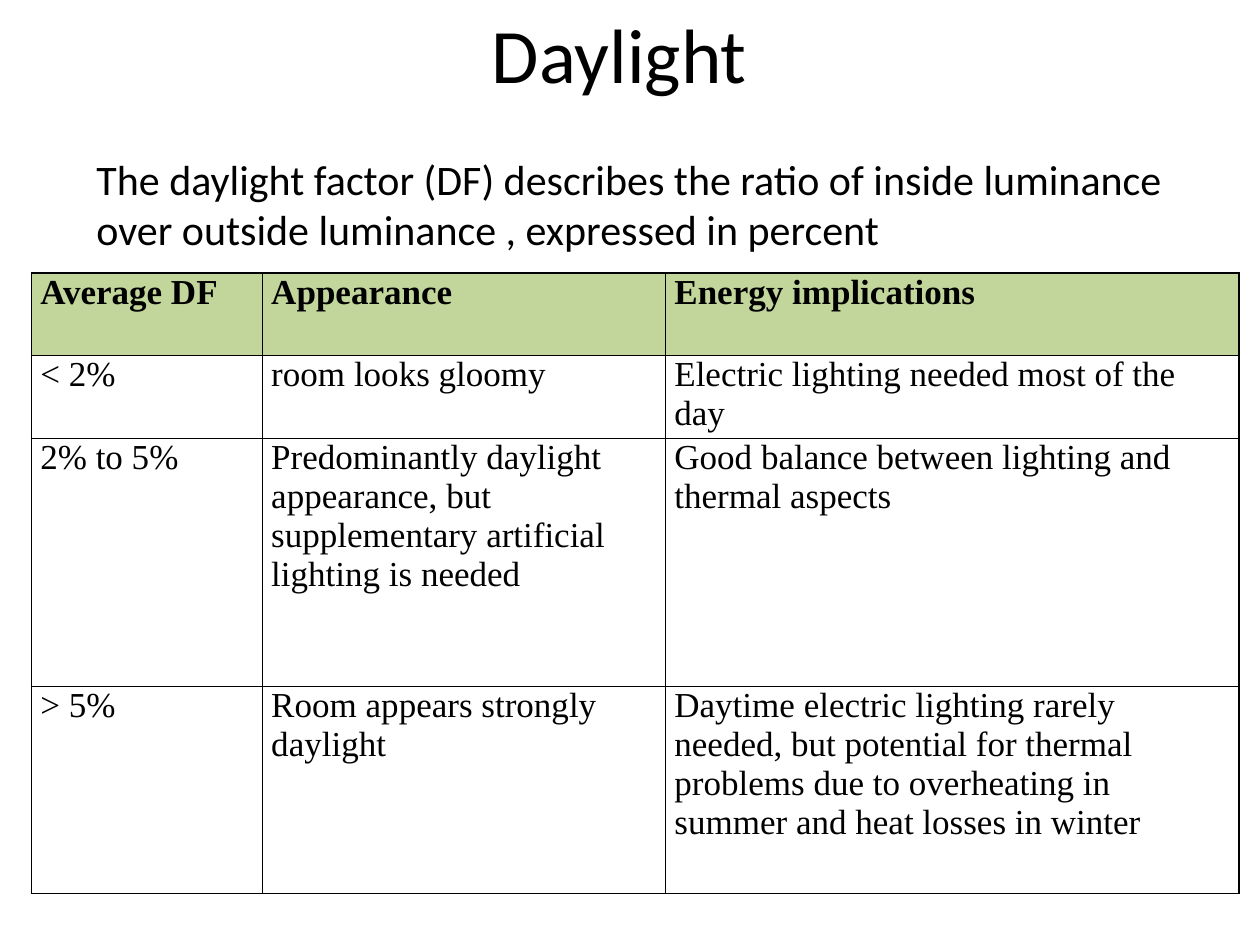
from lxml import etree
from pptx import Presentation, util as u
from pptx.dml.color import RGBColor
from pptx.enum import text as t
from pptx.oxml.ns import qn

HUES = {"ink": "000000", "line": "000000", "head": "C2D69B"}
ROWS = [
    ("Average DF", "Appearance", "Energy implications"),
    ("< 2%", "room looks gloomy", "Electric lighting needed most of the day"),
    ("2% to 5%",
     "Predominantly daylight appearance, but supplementary artificial lighting is needed",
     "Good balance between lighting and thermal aspects"),
    ("> 5%", "Room appears strongly daylight",
     "Daytime electric lighting rarely needed, but potential for thermal problems "
     "due to overheating in summer and heat losses in winter"),
]


class Deck:
    """One slide on a grid of 120 columns by 90 rows, 12 to the inch."""

    def __init__(self):
        self.prs = Presentation()
        self.prs.slide_width, self.prs.slide_height = u.Inches(10), u.Inches(7.5)
        self.slide = self.prs.slides.add_slide(self.prs.slide_layouts[5])

    def unit(self, *vals):
        return [u.Inches(v / 12) for v in vals]

    def label(self, frame, words, size, face="Calibri", bold=False):
        frame.text = words
        frame.word_wrap = True
        font = frame.paragraphs[0].font
        font.size, font.name, font.bold = u.Pt(size), face, bold
        font.color.rgb = RGBColor.from_string(HUES["ink"])

    def title(self, words, *box):
        head = self.slide.shapes.title
        head.left, head.top, head.width, head.height = self.unit(*box)
        self.label(head.text_frame, words, 44)
        head.text_frame.vertical_anchor = t.MSO_ANCHOR.MIDDLE
        head.text_frame.paragraphs[0].alignment = t.PP_ALIGN.CENTER

    def text(self, words, *box):
        frame = self.slide.shapes.add_textbox(*self.unit(*box)).text_frame
        self.label(frame, words, 24)
        frame.auto_size = t.MSO_AUTO_SIZE.SHAPE_TO_FIT_TEXT

    def table(self, rows, left, top, wide, tall):
        """Draw rows with column widths wide and row heights tall."""
        box = self.unit(left, top, sum(wide), sum(tall))
        grid = self.slide.shapes.add_table(len(tall), len(wide), *box).table
        grid.first_row = grid.horz_banding = False
        for col, size in zip(grid.columns, self.unit(*wide)):
            col.width = size
        for row, size in zip(grid.rows, self.unit(*tall)):
            row.height = size
        for r, row in enumerate(rows):
            for c, words in enumerate(row):
                self.cell(grid.cell(r, c), words, r == 0)

    def cell(self, cell, words, head):
        self.label(cell.text_frame, words, 20, "Times New Roman", head)
        cell.margin_left = cell.margin_right = u.Inches(0.07)
        cell.margin_top = cell.margin_bottom = 0
        self.edge(cell)
        if head:
            cell.fill.solid()
            cell.fill.fore_color.rgb = RGBColor.from_string(HUES["head"])
        else:
            cell.fill.background()

    def edge(self, cell):
        """Rule all four sides of a cell."""
        props = cell._tc.get_or_add_tcPr()
        for side in "LRTB":
            line = etree.SubElement(props, qn(f"a:ln{side}"), w=str(u.Pt(1)))
            fill = etree.SubElement(line, qn("a:solidFill"))
            etree.SubElement(fill, qn("a:srgbClr"), val=HUES["line"])


def main():
    deck = Deck()
    deck.title("Daylight", 5, 0, 108, 10)
    step = 3.94  # height of one table line
    deck.table(ROWS, 3, 26, (22, 38.4, 54.6), [n * step for n in (2, 2, 6, 5)])
    deck.text("The daylight factor (DF) describes the ratio of inside luminance "
              "over outside luminance , expressed in percent", 8, 14, 106, 10.9)
    deck.prs.save("out.pptx")


if __name__ == "__main__":
    main()
